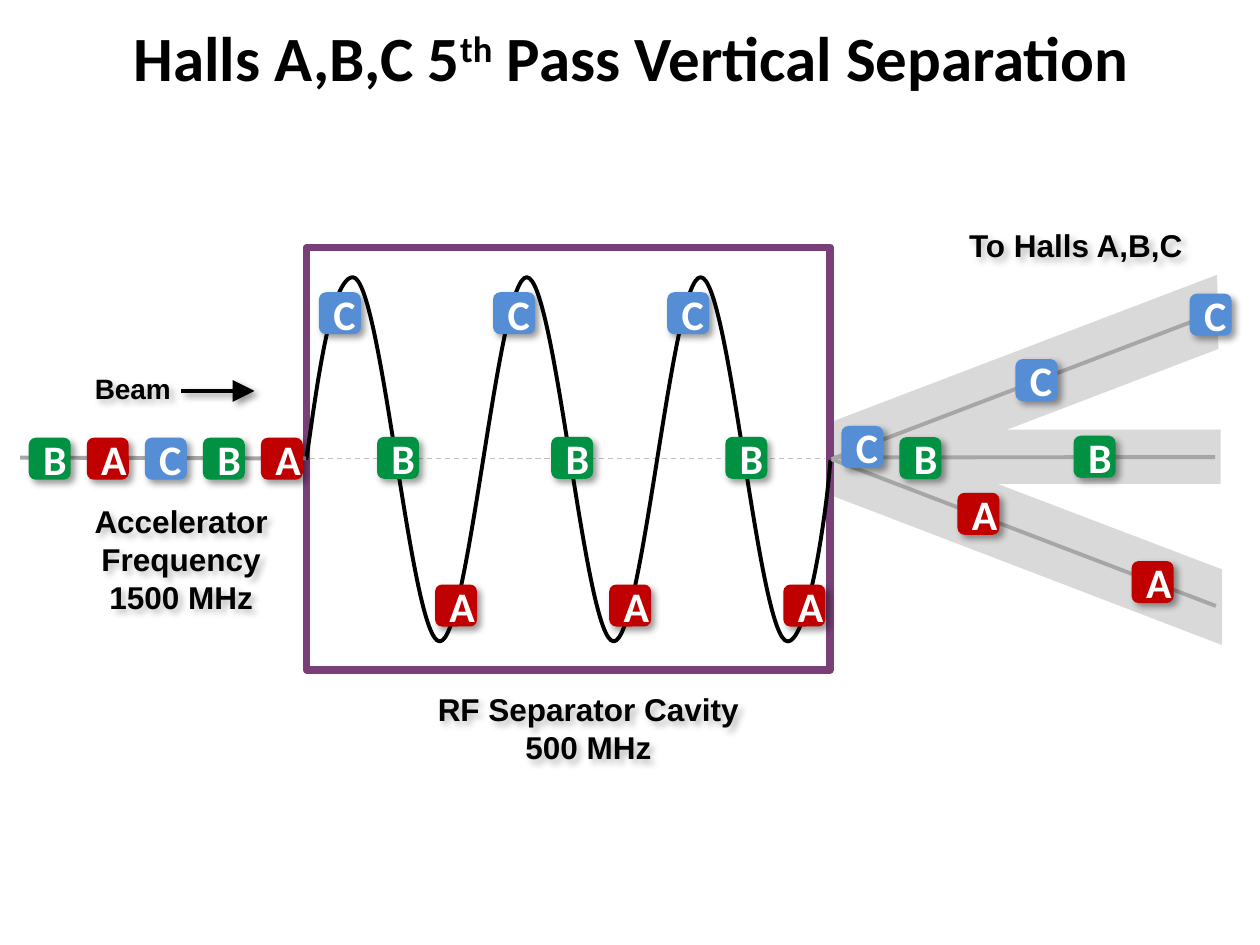
import pptx
import pptx.util
import pptx.dml.color
import pptx.enum.dml
import pptx.enum.shapes
import pptx.enum.text
import pptx.oxml
import pptx.oxml.ns

Pt = pptx.util.Pt
KIND = pptx.enum.shapes.MSO_SHAPE
MID = 262
SIZE = 24
STEP = 33.17
TINTS = {"A": "C00000", "B": "009242", "C": "558ED5"}


def paint(target, tint):
    if hasattr(target, "solid"):
        target.solid()
        target = target.fore_color
    target.rgb = pptx.dml.color.RGBColor.from_string(tint)


def make(tag, inner="", extra=""):
    space = pptx.oxml.ns.nsdecls("a")
    return pptx.oxml.parse_xml(f"<a:{tag} {space} {extra}>{inner}</a:{tag}>")


def shade(item, depth=0):
    cast = (
        '<a:outerShdw blurRad="50800" dist="38100" dir="2700000" algn="tl">'
        f'<a:srgbClr val="000000"><a:alpha val="{depth * 1000}"/></a:srgbClr></a:outerShdw>'
    )
    item._element.spPr.append(make("effectLst", cast if depth else ""))


def style(item, fill=None, line=None, width=1, depth=0):
    if fill:
        paint(item.fill, fill)
    else:
        item.fill.background()
    if line:
        paint(item.line.fill, line)
        item.line.width = Pt(width)
    else:
        item.line.fill.background()
    shade(item, depth)


def write(par, text, size, face, tint="000000", lift=0):
    run = par.add_run()
    run.text = text
    run.font.size = Pt(size)
    run.font.name = face
    run.font.bold = True
    paint(run.font.color, tint)
    if lift:
        run.font._element.set("baseline", str(lift * 1000))


def add_box(shapes, area, fill, line=None, width=1):
    item = shapes.add_shape(KIND.RECTANGLE, *map(Pt, area))
    style(item, fill, line, width)


def add_label(shapes, area, lines, size=18):
    box = shapes.add_textbox(*map(Pt, area))
    frame = box.text_frame
    frame.word_wrap = True
    for i, text in enumerate(lines):
        par = frame.add_paragraph() if i else frame.paragraphs[0]
        par.alignment = pptx.enum.text.PP_ALIGN.CENTER
        write(par, text, size, "Arial")
    shade(box, 25)


def add_title(shapes):
    box = shapes.add_textbox(Pt(24.5), Pt(7.2), Pt(672.5), Pt(72))
    box.text_frame.word_wrap = True
    par = box.text_frame.paragraphs[0]
    par.alignment = pptx.enum.text.PP_ALIGN.CENTER
    for text, lift in (("Halls A,B,C 5", 0), ("th", 30), (" Pass Vertical Separation", 0)):
        write(par, text, 36, "Calibri", lift=lift)


def add_line(shapes, ends, tint, width, dash=False, arrow=False, depth=0):
    kind = pptx.enum.shapes.MSO_CONNECTOR.STRAIGHT
    item = shapes.add_connector(kind, *map(Pt, ends))
    paint(item.line.fill, tint)
    item.line.width = Pt(width)
    if dash:
        item.line.dash_style = pptx.enum.dml.MSO_LINE.DASH
    if arrow:
        tail = make("tailEnd", extra='type="triangle" w="lg" len="lg"')
        item.line._get_or_add_ln().append(tail)
    shade(item, depth)


def add_path(shapes, points, close, **look):
    spots = [(Pt(x), Pt(y)) for x, y in points]
    form = shapes.build_freeform(*spots[0], scale=1.0)
    form.add_line_segments(spots[1:], close=close)
    item = form.convert_to_shape()
    style(item, **look)
    return item


def curve(item):
    name = pptx.oxml.ns.qn
    legs = list(item._element.iter(name("a:lnTo")))
    for i in range(0, len(legs), 3):
        arc = make("cubicBezTo")
        legs[i].addprevious(arc)
        for leg in legs[i:i + 3]:
            arc.append(leg[0])
            leg.getparent().remove(leg)


def add_wave(shapes):
    crest, dip, half, pull = 158.4, 366.5, 49.7, 16.5
    knots = [(201.6 + half * i, dip if i % 2 else crest) for i in range(6)]
    points = [(175, 262.8), (179.3, 235.4), (187.9, 159), knots[0]]
    for (x, y), (u, v) in zip(knots, knots[1:]):
        points += [(x + pull, y), (u - pull, v), (u, v)]
    points += [(462.2, dip), (473, 287.3), (474.5, 262.8)]
    curve(add_path(shapes, points, False, line="000000", width=2.25))


def add_bunch(shapes, slot, top):
    name = "BAC"[slot % 3]
    left = 16.4 + slot * STEP
    item = shapes.add_shape(KIND.ROUNDED_RECTANGLE, Pt(left), Pt(top), Pt(SIZE), Pt(SIZE))
    style(item, TINTS[name], depth=40)
    item.text_frame.word_wrap = True
    item.text_frame.vertical_anchor = pptx.enum.text.MSO_ANCHOR.MIDDLE
    par = item.text_frame.paragraphs[0]
    par.alignment = pptx.enum.text.PP_ALIGN.CENTER
    write(par, name, 24, "Calibri", "FFFFFF")


def main():
    deck = pptx.Presentation()
    deck.slide_width, deck.slide_height = Pt(720), Pt(540)
    shapes = deck.slides.add_slide(deck.slide_layouts[6]).shapes

    fan = [(476.6, 240.5), (476.6, 283.7), (698.4, 368.6), (698.4, 325.4),
           (532.1, 262.1), (696.2, 199.4), (695.5, 157)]
    add_path(shapes, fan, True, fill="D9D9D9")
    add_box(shapes, (175.2, 141.4, 299.2, 241.4), "FFFFFF", "783F79", 4.25)
    add_line(shapes, (177, MID, 471.6, MID), "BFBFBF", 0.75, dash=True)

    add_label(shapes, (36.9, 283.4, 133.2, 72.7), ["Accelerator", "Frequency", "1500 MHz"])
    add_label(shapes, (230.7, 391, 211, 51), ["RF Separator Cavity", "500 MHz"])
    add_label(shapes, (539.5, 125.6, 150.5, 29), ["To Halls A,B,C"])
    beam = shapes.add_group_shape().shapes
    add_label(beam, (42.8, 208.8, 70.6, 26.6), ["Beam "], 16)
    add_line(beam, (103.7, 223.4, 145.4, 223.4), "000000", 2.5, arrow=True, depth=40)
    add_title(shapes)

    add_box(shapes, (532.1, 245.5, 165.4, 31), "D9D9D9")
    add_line(shapes, (476.6, 261.4, 694.3, 261.2), "A6A6A6", 2.25)
    add_wave(shapes)
    for end in (178.6, 346.3):
        add_line(shapes, (475.2, 262.4, 694.8, end), "A6A6A6", 2.25)

    tops = {"A": 334, "B": 249.6, "C": 167}
    for slot in range(5, 14):
        add_bunch(shapes, slot, tops["BAC"[slot % 3]])
    for slot, top in enumerate((243.4, 249.8, 281.6, 205.2, 249, 320.6, 167.8), 14):
        add_bunch(shapes, slot, top)

    train = shapes.add_group_shape().shapes
    add_line(train, (11.5, 261.5, 175, 262), "A6A6A6", 2.25)
    for slot in range(5):
        add_bunch(train, slot, 250.1)

    deck.save("out.pptx")


if __name__ == "__main__":
    main()
